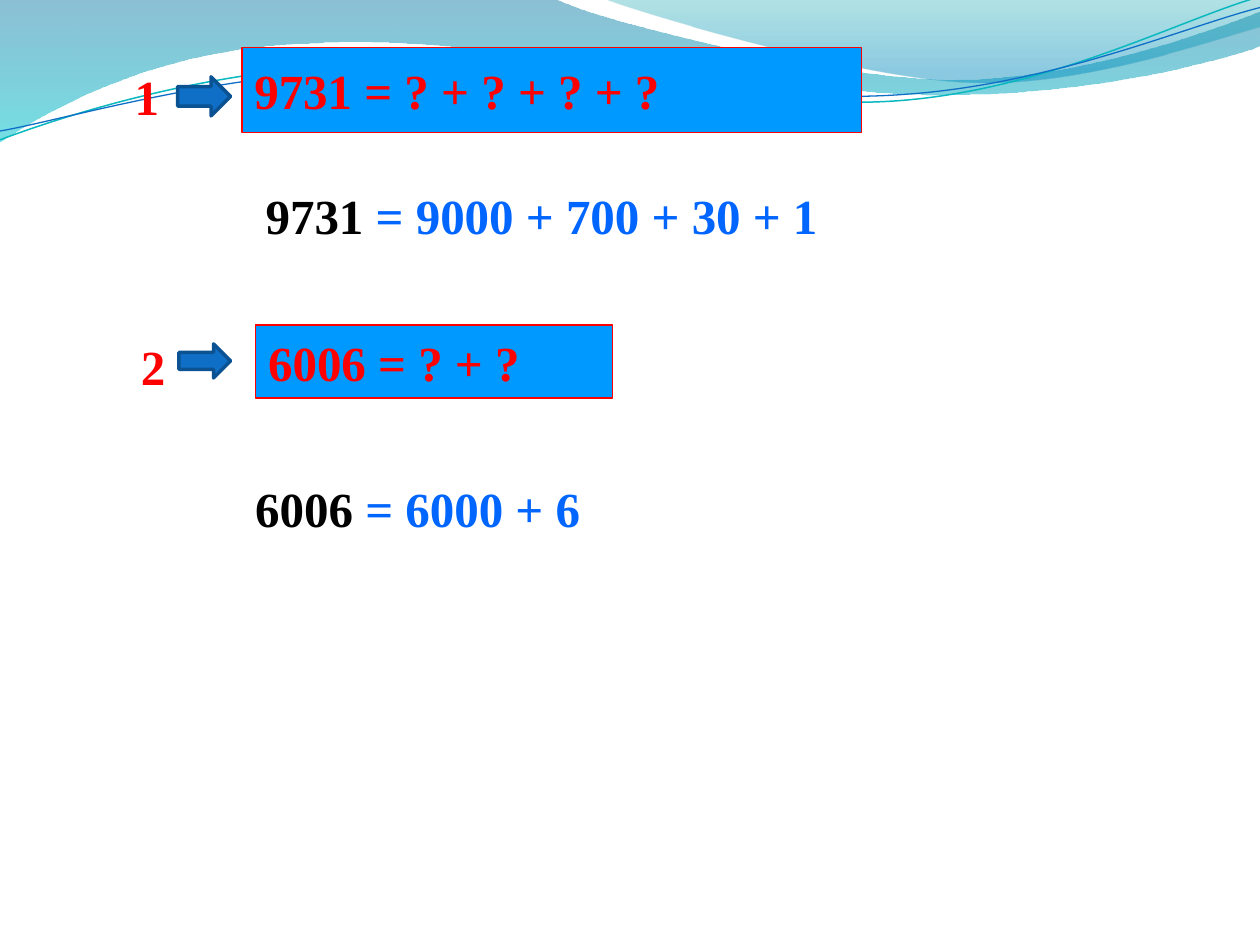
from dataclasses import dataclass

from lxml.etree import SubElement
from pptx import Presentation
from pptx.dml.color import RGBColor as Rgb
from pptx.enum.shapes import MSO_SHAPE as Kind
from pptx.enum.text import MSO_ANCHOR as Anchor, MSO_AUTO_SIZE as Auto, PP_ALIGN as Align
from pptx.oxml.ns import qn
from pptx.util import Inches, Pt


@dataclass(frozen=True)
class Theme:
    """Colours, font and type size of the slide."""
    font: str = "Times New Roman"
    size: int = 28
    red: str = "FF0000"
    black: str = "000000"
    blue: str = "0066FF"
    panel: str = "0099FF"
    arrow: str = "0F6FC6"
    edge: str = "0B5292"
    teal: str = "0AB8BF"
    upper: tuple = ((0, "0074A1", 45), (1, "00C6CF", 55))
    lower: tuple = ((0, "00A1A9", 30), (0.8, "008BBF", 45))


THEME = Theme()
UNITS = 1000

BAND = [(0, 0), [(4.4, -0.01)],
        [(4.76, 0.17), (6.64, 0.63), (7.58, 0.63)],
        [(8.53, 0.63), (9.58, 0.26), (10, 0.09)], [(10.01, 0.36)],
        [(9.83, 0.44), (8.7, 0.76), (7.46, 0.75)],
        [(6.22, 0.75), (3.82, 0.28), (2.57, 0.34)],
        [(1.29, 0.36), (0.46, 0.83), (-0.01, 1.13)], [(0, 0)]]
CREST = [(4.79, -0.01), [(5.09, 0.11), (6.82, 0.62), (7.69, 0.65)],
         [(8.56, 0.69), (9.61, 0.32), (10, 0.21)], [(10, 0)], [(4.79, -0.01)]]
LINES = [
    ([(0, 1.11), [(0.48, 0.93), (1.58, 0.57), (2.77, 0.52)],
      [(3.95, 0.47), (5.93, 0.89), (7.13, 0.8)],
      [(8.33, 0.71), (9.38, 0.15), (9.98, -0.02)]], THEME.teal, 0.85),
    ([(0, 1.04), [(0.47, 0.96), (1.64, 0.61), (2.83, 0.56)],
      [(4.03, 0.51), (5.97, 0.84), (7.17, 0.75)],
      [(8.36, 0.67), (9.41, 0.21), (10, 0.06)]], THEME.arrow, 0.75),
]


def apply(obj, vals):
    """Set each attribute of obj from a dict."""
    for name, val in vals.items():
        setattr(obj, name, val)


def bend(shape, parts):
    """Turn each run of three segments into one cubic curve."""
    nodes = iter(list(shape._element.iter(qn("a:lnTo"))))
    for part in parts:
        group = [next(nodes) for _ in part]
        if len(group) == 3:
            track = group[0].getparent()
            curve = SubElement(track, qn("a:cubicBezTo"))
            group[0].addprevious(curve)
            for node in group:
                curve.append(node[0])
                track.remove(node)


def trace(slide, route, close):
    """Draw a curved outline from a start point and its segments."""
    points = [route[0], *(point for part in route[1:] for point in part)]
    grid = [(round(x * UNITS), round(y * UNITS)) for x, y in points]
    pen = slide.shapes.build_freeform(*grid[0], scale=Inches(1) / UNITS)
    pen.add_line_segments(grid[1:], close=close)
    shape = pen.convert_to_shape()
    shape.shadow.inherit = False
    bend(shape, route[1:])
    return shape


def stroke(shape, color, width):
    """Give a shape a solid outline."""
    shape.line.color.rgb = Rgb.from_string(color)
    shape.line.width = Pt(width)


def add_wave(slide, route, stops):
    """Add a filled wave with a see-through gradient."""
    shape = trace(slide, route, True)
    shape.line.fill.background()
    shape.fill.gradient()
    shape.fill.gradient_angle = 270
    for stop, (place, color, _) in zip(shape.fill.gradient_stops, stops):
        stop.color.rgb = Rgb.from_string(color)
        stop.position = place
    for node, (_, _, alpha) in zip(shape._element.iter(qn("a:srgbClr")), stops):
        SubElement(node, qn("a:alpha"), val=str(alpha * 1000))


def add_line(slide, route, color, width):
    """Add an open wavy line."""
    shape = trace(slide, route, False)
    shape.fill.background()
    stroke(shape, color, width)
    return shape


def write(para, runs):
    """Fill a paragraph with coloured bold runs."""
    for text, color in runs:
        run = para.add_run()
        run.text = text
        apply(run.font, {"name": THEME.font, "size": Pt(THEME.size), "bold": True})
        run.font.color.rgb = Rgb.from_string(color)


def add_text(slide, box, runs, align=Align.LEFT):
    """Add a text box with half a line of space before."""
    shape = slide.shapes.add_textbox(*map(Inches, box))
    frame = shape.text_frame
    apply(frame, {"word_wrap": True, "auto_size": Auto.SHAPE_TO_FIT_TEXT})
    para = frame.paragraphs[0]
    para.alignment = align
    space = SubElement(para._p.get_or_add_pPr(), qn("a:spcBef"))
    SubElement(space, qn("a:spcPct"), val="50000")
    write(para, runs)
    return shape


def add_label(slide, box, text):
    """Add a centred red number."""
    return add_text(slide, box, [(text, THEME.red)], Align.CENTER)


def add_sum(slide, box, lead, rest):
    """Add an answer with a black number and a blue sum."""
    add_text(slide, box, [(lead, THEME.black), (rest, THEME.blue)])


def add_form(slide, kind, box, fill, edge, width):
    """Add a preset shape with plain fill and outline."""
    shape = slide.shapes.add_shape(kind, *map(Inches, box))
    shape.shadow.inherit = False
    shape.fill.solid()
    shape.fill.fore_color.rgb = Rgb.from_string(fill)
    stroke(shape, edge, width)
    return shape


def add_panel(slide, box, text):
    """Add a blue panel holding a question."""
    shape = add_form(slide, Kind.RECTANGLE, box, THEME.panel, THEME.red, 0.75)
    frame = shape.text_frame
    apply(frame, {"word_wrap": False, "vertical_anchor": Anchor.MIDDLE})
    para = frame.paragraphs[0]
    para.alignment = Align.LEFT
    write(para, [(text, THEME.red)])
    return shape


def main():
    """Build and save the slide."""
    deck = Presentation()
    apply(deck, {"slide_width": Inches(10), "slide_height": Inches(7.5)})
    slide = deck.slides.add_slide(deck.slide_layouts[6])
    add_wave(slide, BAND, THEME.upper)
    add_wave(slide, CREST, THEME.lower)
    slide.shapes.add_group_shape([add_line(slide, *line) for line in LINES])
    slide.shapes.add_group_shape([
        add_label(slide, (0.5, 0.48, 1.33, 0.57), "1"),
        add_panel(slide, (1.92, 0.38, 4.92, 0.67), "9731 = ? + ? + ? + ?")])
    add_sum(slide, (2.01, 1.42, 4.83, 0.57), "9731", " = 9000 + 700 + 30 + 1")
    add_panel(slide, (2.03, 2.58, 2.83, 0.58), "6006 = ? + ?")
    add_sum(slide, (1.83, 3.75, 4.92, 0.57), " 6006", " = 6000 + 6")
    add_label(slide, (0.55, 2.62, 1.33, 0.57), "2")
    for box in ((1.41, 0.61, 0.42, 0.31), (1.42, 2.73, 0.41, 0.27)):
        add_form(slide, Kind.RIGHT_ARROW, box, THEME.arrow, THEME.edge, 2)
    deck.save("out.pptx")


if __name__ == "__main__":
    main()
